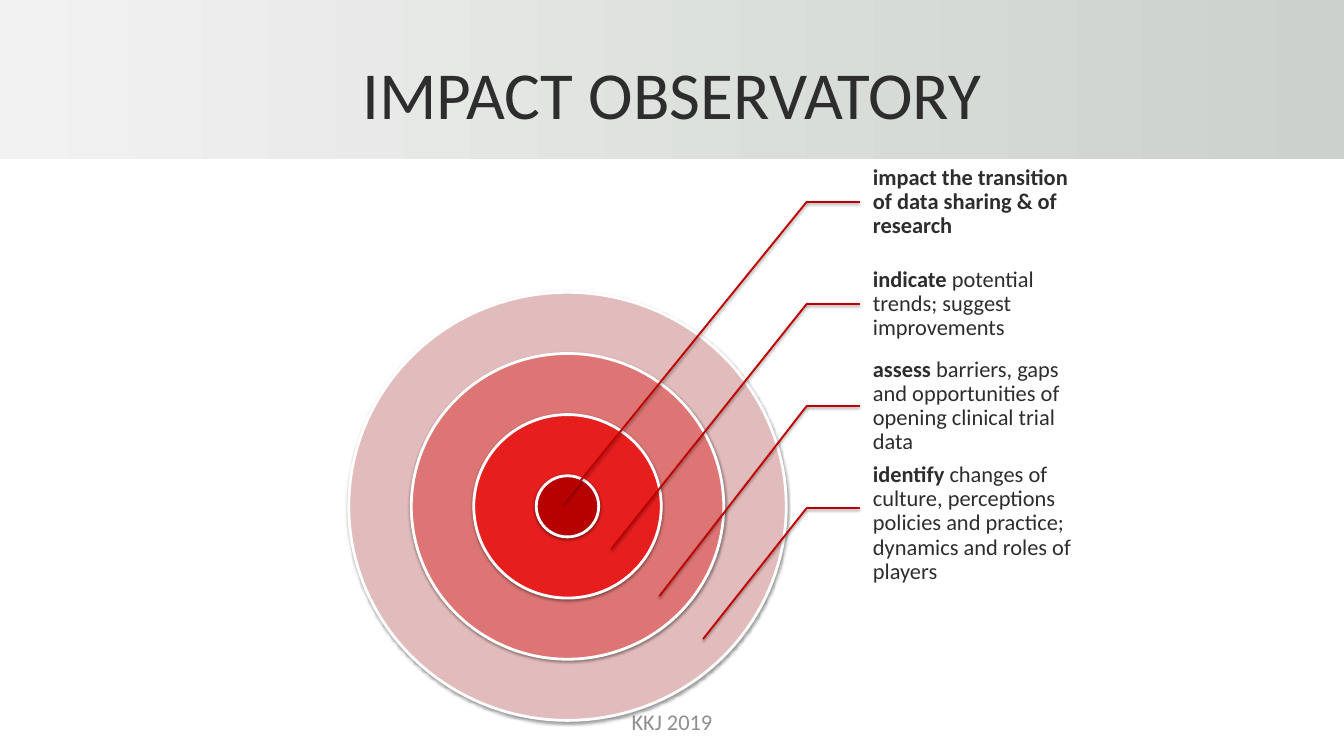
from collections import namedtuple

from lxml import etree
from pptx import Presentation, util as u
from pptx.dml.color import RGBColor
from pptx.enum import shapes as s, text as t
from pptx.oxml import ns, parse_xml

WHITE = RGBColor(0xFF, 0xFF, 0xFF)
BAND_LEFT = RGBColor(0xF2, 0xF2, 0xF2)
BAND_RIGHT = RGBColor(0xCB, 0xD1, 0xCC)
INK = RGBColor(0x2D, 0x2D, 0x2D)
GREY = RGBColor(0x8F, 0x8F, 0x8F)
LEADER = RGBColor(0xC0, 0x00, 0x00)
RINGS = [  # outermost first
    RGBColor(0xE2, 0xBC, 0xBC),
    RGBColor(0xDD, 0x75, 0x75),
    RGBColor(0xE6, 0x1E, 0x1E),
    RGBColor(0xB7, 0x00, 0x00),
]
FONT = "Calibri"

CALLOUTS = [  # bold start, rest, tip as a share of the target, drop in rows
    ("impact the transition of data sharing & of research", "", 0.49, 0),
    ("indicate", " potential trends; suggest improvements", 0.6, 0),
    ("assess", " barriers, gaps and opportunities of opening clinical trial data",
     0.71, 0),
    ("identify", " changes of culture, perceptions policies and practice; "
     "dynamics and roles of players", 0.81, 0.15),
]

Box = namedtuple("Box", "left top width height")


def share(box, x, y, width=0, height=0):
    """Return the part of a box given by shares of its width and height."""
    return Box(int(box.left + x * box.width), int(box.top + y * box.height),
               int(width * box.width), int(height * box.height))


def assign(target, values):
    for name, value in values.items():
        setattr(target, name, value)


def add_shadow(shape):
    properties = shape._element.spPr
    for old in properties.findall(ns.qn("a:effectLst")):
        properties.remove(old)
    effects = etree.SubElement(properties, ns.qn("a:effectLst"))
    effects.append(parse_xml(
        f'<a:outerShdw {ns.nsdecls("a")} blurRad="{u.Pt(3.1)}" dist="{u.Pt(1.6)}" '
        'dir="5400000" rotWithShape="0"><a:srgbClr val="000000">'
        '<a:alpha val="38000"/></a:srgbClr></a:outerShdw>'))


def write(shape, spans, size, colour, align, margins, spacing=1.0):
    """Fill a shape with one paragraph of (words, bold) spans."""
    frame = shape.text_frame
    left, top, right, bottom = map(u.Inches, margins)
    assign(frame, dict(word_wrap=True, auto_size=t.MSO_AUTO_SIZE.NONE,
                       vertical_anchor=t.MSO_ANCHOR.MIDDLE,
                       margin_left=left, margin_top=top,
                       margin_right=right, margin_bottom=bottom))
    para = frame.paragraphs[0]
    assign(para, dict(alignment=align, line_spacing=spacing))
    for words, bold in spans:
        span = para.add_run()
        span.text = words
        assign(span.font, dict(name=FONT, size=u.Pt(size), bold=bold))
        span.font.color.rgb = colour


def add_header(page, box):
    band = page.shapes.add_shape(s.MSO_SHAPE.RECTANGLE, *box)
    band.shadow.inherit = False
    band.line.fill.background()
    band.fill.gradient()
    band.fill.gradient_angle = 0
    for stop, position, colour in zip(band.fill.gradient_stops, (0, 1),
                                      (BAND_LEFT, BAND_RIGHT)):
        stop.position = position
        stop.color.rgb = colour
    page.shapes._spTree.insert(2, band._element)  # behind the title

    title = page.shapes.title
    assign(title, share(box, 0.05, 0.19, 0.9, 0.79)._asdict())
    write(title, [("IMPACT OBSERVATORY", False)], 72, INK,
          t.PP_ALIGN.CENTER, (0.2, 0.1, 0.2, 0.1))


def add_footer(page, box):
    footer = page.shapes.add_textbox(*box)
    write(footer, [("KKJ 2019", False)], 24, GREY,
          t.PP_ALIGN.CENTER, (0.2, 0.1, 0.2, 0.1))


def add_target(page, box):
    """Draw concentric rings, each one seventh of the box thick."""
    for index, colour in enumerate(RINGS):
        inset, size = index / 7, 1 - 2 * index / 7
        ring = page.shapes.add_shape(s.MSO_SHAPE.OVAL,
                                     *share(box, inset, inset, size, size))
        ring.fill.solid()
        ring.fill.fore_color.rgb = colour
        ring.line.color.rgb = WHITE
        ring.line.width = u.Pt(3)
        add_shadow(ring)


def add_leader(page, start, end):
    leader = page.shapes.add_connector(s.MSO_CONNECTOR.STRAIGHT,
                                       start.left, start.top, end.left, end.top)
    leader.line.color.rgb = LEADER
    leader.line.width = u.Pt(2)
    add_shadow(leader)
    return leader


def add_callouts(page, box, target):
    """Stack the labels in rows and lead each one to its ring."""
    row = 1 / len(CALLOUTS)
    for index, (start, rest, tip, drop) in enumerate(CALLOUTS):
        label = page.shapes.add_textbox(
            *share(box, 0.2, (index + drop) * row, 0.8, row))
        spans = [(start, True), (rest, False)] if rest else [(start, True)]
        write(label, spans, 24, INK, t.PP_ALIGN.LEFT,
              (0.19, 0.03, 0.03, 0.03), 0.9)
        middle = (index + 0.5) * row
        elbow = share(box, 0, middle)
        level = add_leader(page, elbow, share(box, 0.2, middle))
        if not drop:
            level.end_connect(label, 1)
        add_leader(page, elbow, share(target, tip, tip))


def main():
    deck = Presentation()
    assign(deck, dict(slide_width=u.Inches(20), slide_height=u.Inches(11.25)))
    page = deck.slides.add_slide(deck.slide_layouts[5])
    whole = Box(0, 0, deck.slide_width, deck.slide_height)
    target = share(whole, 0.2595, 0.3867, 0.3255, 0.5662)
    target = Box(u.Inches(5.19), u.Inches(4.35), u.Inches(6.51), u.Inches(6.37))
    add_header(page, share(whole, 0, 0, 1, 0.21))
    add_footer(page, share(whole, 0.34, 0.93, 0.32, 0.05))
    add_target(page, target)
    add_callouts(page, share(whole, 0.6, 0.2, 0.2, 0.54), target)
    deck.save("out.pptx")


if __name__ == "__main__":
    main()
